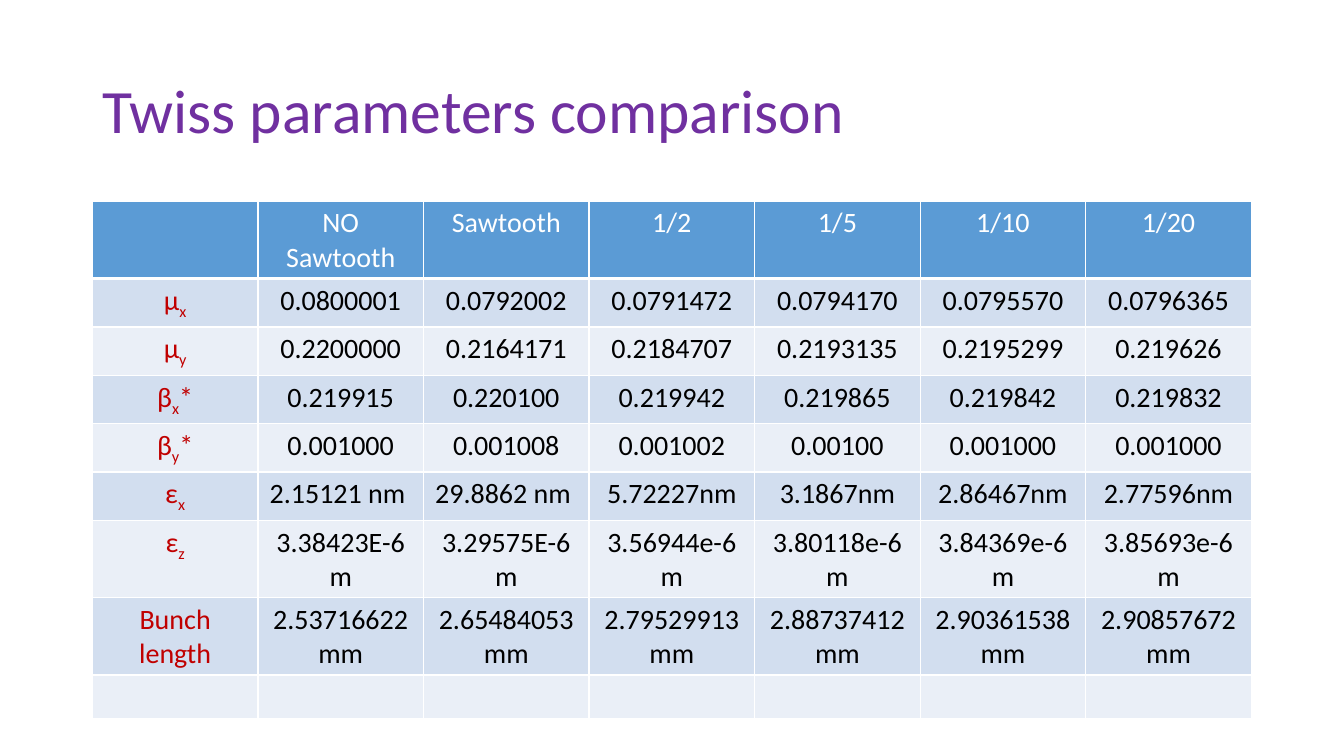
from lxml.etree import SubElement
from pptx import Presentation
from pptx.dml.color import RGBColor
from pptx.enum.text import MSO_ANCHOR, PP_ALIGN
from pptx.oxml.ns import qn
from pptx.util import Pt

FONT = "Calibri"
PURPLE = RGBColor(0x70, 0x30, 0xA0)
RED = RGBColor(0xC0, 0x00, 0x00)
BLACK = RGBColor(0x00, 0x00, 0x00)
WHITE = RGBColor(0xFF, 0xFF, 0xFF)
HEADER_BLUE = RGBColor(0x5B, 0x9B, 0xD5)
BAND_COLORS = (RGBColor(0xD2, 0xDE, 0xEF), RGBColor(0xEA, 0xEF, 0xF7))
ROW_HEIGHT = 31

# Each label is a symbol, its subscript and what follows the subscript.
HEADER = ["", "NO Sawtooth", "Sawtooth", "1/2", "1/5", "1/10", "1/20"]
TWISS_ROWS = [
    [("μ", "x", ""), "0.0800001", "0.0792002", "0.0791472", "0.0794170", "0.0795570", "0.0796365"],
    [("μ", "y", ""), "0.2200000", "0.2164171", "0.2184707", "0.2193135", "0.2195299", "0.219626"],
    [("β", "x", "*"), "0.219915", "0.220100", "0.219942", "0.219865", "0.219842", "0.219832"],
    [("β", "y", "*"), "0.001000", "0.001008", "0.001002", "0.00100", "0.001000", "0.001000"],
    [("ε", "x", ""), "2.15121 nm ", "29.8862 nm ", "5.72227nm", "3.1867nm", "2.86467nm", "2.77596nm"],
    [("ε", "z", ""), "3.38423E-6 m", "3.29575E-6 m", "3.56944e-6m", "3.80118e-6m", "3.84369e-6m",
     "3.85693e-6m"],
    [("Bunch length", "", ""), "2.53716622 mm", "2.65484053 mm", "2.79529913mm", "2.88737412mm",
     "2.90361538mm", "2.90857672mm"],
    [("", "", "")] + [""] * 6,
]


def style_paragraph(para, size, color):
    para.font.name = FONT
    para.font.size = Pt(size)
    para.font.color.rgb = color


def add_title(page, left, top, width, height):
    box = page.shapes.add_textbox(Pt(left), Pt(top), Pt(width), Pt(height))
    frame = box.text_frame
    frame.word_wrap = True
    frame.vertical_anchor = MSO_ANCHOR.MIDDLE
    para = frame.paragraphs[0]
    para.text = "Twiss parameters comparison"
    para.line_spacing = 0.9
    style_paragraph(para, 44, PURPLE)


def set_borders(cell, bottom_width):
    """Draw white borders, 1 pt wide except at the bottom."""
    properties = cell._tc.get_or_add_tcPr()
    sides = (("a:lnL", 1), ("a:lnR", 1), ("a:lnT", 1), ("a:lnB", bottom_width))
    for position, (tag, width) in enumerate(sides):
        line = properties.makeelement(qn(tag), {"w": str(Pt(width))})
        properties.insert(position, line)
        fill = SubElement(line, qn("a:solidFill"))
        SubElement(fill, qn("a:srgbClr"), val=str(WHITE))


def fill_cell(cell, content, text_color, fill_color, bottom_width=1):
    """Write plain text, or a label of symbol, subscript and suffix."""
    para = cell.text_frame.paragraphs[0]
    para.alignment = PP_ALIGN.CENTER
    style_paragraph(para, 20, text_color)
    parts = content if isinstance(content, tuple) else (content,)
    for position, part in enumerate(parts):
        if part:
            span = para.add_run()
            span.text = part
            if position == 1:
                span._r.get_or_add_rPr().set("baseline", "-25000")
    cell.fill.solid()
    cell.fill.fore_color.rgb = fill_color
    set_borders(cell, bottom_width)


def add_twiss_table(page, left, top, width, height):
    frame = page.shapes.add_table(len(TWISS_ROWS) + 1, len(HEADER),
                                  Pt(left), Pt(top), Pt(width), Pt(height))
    table = frame.table
    for row in table.rows:
        row.height = Pt(ROW_HEIGHT)
    frame.height = Pt(height)
    for column, text in enumerate(HEADER):
        fill_cell(table.cell(0, column), text, WHITE, HEADER_BLUE, bottom_width=3)
    for index, values in enumerate(TWISS_ROWS):
        for column, content in enumerate(values):
            fill_cell(table.cell(index + 1, column), content,
                      BLACK if column else RED, BAND_COLORS[index % 2])


def main():
    deck = Presentation()
    deck.slide_width, deck.slide_height = Pt(960), Pt(540)
    page = deck.slides.add_slide(deck.slide_layouts[6])
    add_title(page, 66, 28.75, 828, 104.4)
    add_twiss_table(page, 66, 143.75, 828, 353)
    deck.save("out.pptx")


if __name__ == "__main__":
    main()
